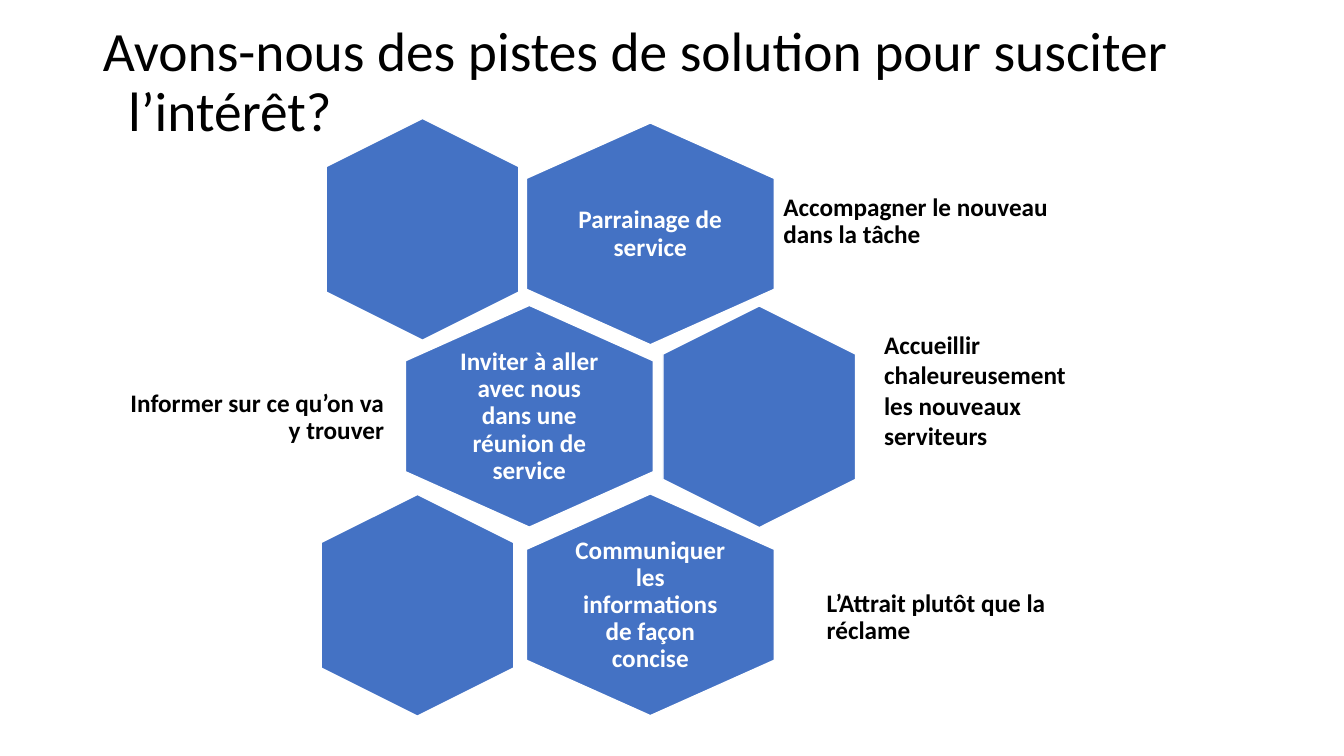
from pptx import Presentation
from pptx.dml.color import RGBColor
from pptx.enum.shapes import MSO_SHAPE as Shape
from pptx.enum.text import MSO_ANCHOR as Anchor, MSO_AUTO_SIZE as AutoSize, PP_ALIGN as Align
from pptx.util import Pt

PX = 9144  # 100 px to the inch
COLORS = {"hexagon": "4472C4", "white": "FFFFFF", "black": "000000"}


def color(name):
    return RGBColor.from_string(COLORS[name])


def add_label(text, left, top, width, height, align, tint, spacing=0.9, anchor=Anchor.MIDDLE, inset=7):
    frame = slide.shapes.add_textbox(left * PX, top * PX, width * PX, height * PX).text_frame
    frame.word_wrap = True
    frame.vertical_anchor = anchor
    frame.margin_left = frame.margin_right = frame.margin_top = frame.margin_bottom = inset * PX
    frame.text = text
    paragraph = frame.paragraphs[0]
    paragraph.alignment = align
    paragraph.line_spacing = spacing
    font = paragraph.runs[0].font
    font.name, font.size, font.bold = "Calibri", Pt(18), True
    font.color.rgb = color(tint)
    return frame


prs = Presentation()
prs.slide_width, prs.slide_height = 1333 * PX, 750 * PX
slide = prs.slides.add_slide(prs.slide_layouts[5])

# Title, with a hanging indent and room left below its two lines
title = slide.shapes.title
title.left, title.top, title.width, title.height = 92 * PX, 40 * PX, 1150 * PX, 145 * PX
heading = title.text_frame
heading.auto_size = AutoSize.NONE
heading.word_wrap = True
heading.vertical_anchor = Anchor.MIDDLE
heading.margin_bottom = 65 * PX
heading.text = "Avons-nous des pistes de solution pour susciter l’intérêt?"
question = heading.paragraphs[0]
question.alignment = Align.LEFT
question.line_spacing = 0.9
question.space_before = Pt(10)
indent = question._p.get_or_add_pPr()
indent.set("marL", str(25 * PX))
indent.set("indent", str(-25 * PX))
question_font = question.runs[0].font
question_font.name, question_font.size = "Calibri", Pt(39.6)
question_font.color.rgb = color("black")

# Honeycomb: centre, breadth and wording of each cell, turned upright
HEX_HEIGHT, WIDE, NARROW = 220, 246, 191
cells = [
    (645, 232, WIDE, "Parrainage de service"),
    (419, 227, NARROW, ""),
    (525, 413, WIDE, "Inviter à aller avec nous dans une réunion de service"),
    (753, 413, NARROW, ""),
    (645, 600, WIDE, "Communiquer les informations de façon concise"),
    (414, 600, NARROW, ""),
]
for x, y, breadth, action in cells:
    cell = slide.shapes.add_shape(
        Shape.HEXAGON, (x - HEX_HEIGHT // 2) * PX, (y - breadth // 2) * PX, HEX_HEIGHT * PX, breadth * PX)
    cell.rotation = 90
    cell.adjustments[0] = 0.25
    cell.shadow.inherit = False
    cell.fill.solid()
    cell.fill.fore_color.rgb = color("hexagon")
    cell.line.color.rgb = color("white")
    cell.line.width = Pt(1)
    if action:
        add_label(action, x - 82, y - 73, 164, 147, Align.CENTER, "white")

# Explanations beside the cells
explanations = [
    ("Accompagner le nouveau dans la tâche", 770, 154, 316, 132, Align.LEFT),
    ("Informer sur ce qu’on va y trouver", 119, 357, 269, 115, Align.RIGHT),
    ("L’Attrait plutôt que la réclame", 813, 547, 316, 132, Align.LEFT),
]
for wording, left, top, width, height, align in explanations:
    add_label(wording, left, top, width, height, align, "black")

welcome = add_label("Accueillir chaleureusement les nouveaux serviteurs", 867, 322, 220, 131,
                    Align.LEFT, "black", spacing=1.0, anchor=Anchor.TOP, inset=5)
welcome.margin_left = welcome.margin_right = 10 * PX
welcome.auto_size = AutoSize.SHAPE_TO_FIT_TEXT

prs.save("out.pptx")
